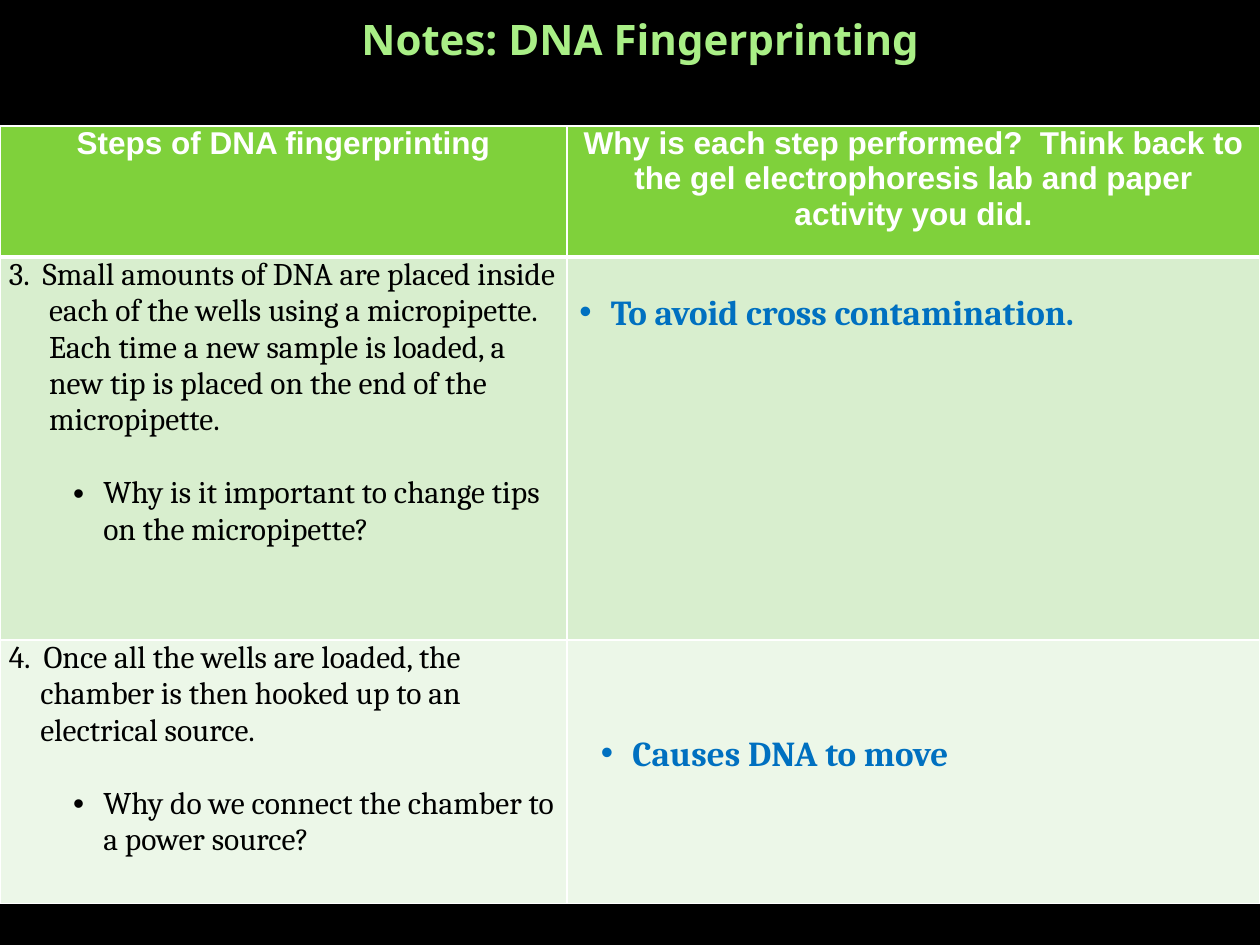
from dataclasses import dataclass

from lxml.etree import SubElement
from pptx import Presentation
from pptx.dml.color import RGBColor
from pptx.enum.text import MSO_ANCHOR, PP_ALIGN
from pptx.oxml.ns import qn
from pptx.util import Inches, Pt


@dataclass(frozen=True)
class Theme:
    backdrop: str = "000000"
    heading: str = "A9EF86"
    header_fill: str = "7FD13B"
    row_fills: tuple = ("D8EECE", "ECF7E8")
    rule: str = "FFFFFF"
    body: str = "000000"
    answer: str = "0070C0"
    title_size: int = 24
    answer_size: int = 20
    table_size: int = 18


@dataclass(frozen=True)
class Style:
    font: str
    size: int
    color: str
    bold: bool = False


@dataclass(frozen=True)
class Step:
    description: str
    hanging: float
    question: str


@dataclass(frozen=True)
class Answer:
    text: str
    left: float
    top: float
    width: float
    height: float


THEME = Theme()
TITLE = Style("Noto Sans", THEME.title_size, THEME.heading, True)
HEADER = Style("Arial", THEME.table_size, THEME.rule, True)
BODY = Style("Cambria", THEME.table_size, THEME.body)
ANSWER = Style("Cambria", THEME.answer_size, THEME.answer, True)

SLIDE_WIDTH, SLIDE_HEIGHT = 10, 7.5
COLUMN_SHARES = (0.45, 0.55)
ROW_HEIGHTS = (1.04, 3.04, 2.09)
TABLE_TOP = 1
BLANK_LINE = 21

HEADERS = (
    "Steps of DNA fingerprinting",
    "Why is each step performed?  Think back to the gel electrophoresis lab "
    "and paper activity you did.",
)
STEPS = (
    Step("3.  Small amounts of DNA are placed inside each of the wells using a "
         "micropipette.  Each time a new sample is loaded, a new tip is placed "
         "on the end of the micropipette.",
         0.32, "Why is it important to change tips on the micropipette?"),
    Step("4.  Once all the wells are loaded, the chamber is then hooked up to an "
         "electrical source.",
         0.25, "Why do we connect the chamber to a power source?"),
)
ANSWERS = (
    Answer("To avoid cross contamination.", 4.5, 2.25, 5.5, 0.44),
    Answer("Causes DNA to move", 4.67, 5.42, 5.17, 0.77),
)


def write(paragraph, text: str, style: Style, align=PP_ALIGN.LEFT) -> None:
    paragraph.alignment = align
    run = paragraph.add_run()
    run.text = text
    run.font.name = style.font
    run.font.size = Pt(style.size)
    run.font.bold = style.bold
    run.font.color.rgb = RGBColor.from_string(style.color)


def indent(paragraph, left: float, hanging: float, bullet: bool = False) -> None:
    properties = paragraph._p.get_or_add_pPr()
    properties.set("marL", str(Inches(left)))
    properties.set("indent", str(-Inches(hanging)))
    if bullet:
        SubElement(properties, qn("a:buFont"), typeface="Arial")
        SubElement(properties, qn("a:buChar"), char="•")


def format_cell(cell, fill: str, top: int, bottom: int) -> None:
    cell.margin_left = cell.margin_right = Inches(0.07)
    cell.margin_top = cell.margin_bottom = 0
    properties = cell._tc.get_or_add_tcPr()
    for side, weight in (("L", 1), ("R", 1), ("T", top), ("B", bottom)):
        border = SubElement(properties, qn(f"a:ln{side}"), w=str(Pt(weight)))
        solid = SubElement(border, qn("a:solidFill"))
        SubElement(solid, qn("a:srgbClr"), val=THEME.rule)
    cell.fill.solid()
    cell.fill.fore_color.rgb = RGBColor.from_string(fill)


def add_title(slide, text: str) -> None:
    title = slide.shapes.add_textbox(Inches(0.58), 0, Inches(9), Inches(0.62))
    title.text_frame.word_wrap = True
    title.text_frame.vertical_anchor = MSO_ANCHOR.MIDDLE
    write(title.text_frame.paragraphs[0], text, TITLE, PP_ALIGN.CENTER)


def write_step(cell, step: Step) -> None:
    description = cell.text_frame.paragraphs[0]
    write(description, step.description, BODY)
    indent(description, step.hanging, step.hanging)
    question = cell.text_frame.add_paragraph()
    question.space_before = Pt(BLANK_LINE)
    write(question, step.question, BODY)
    indent(question, 0.75, 0.24, bullet=True)


def add_steps_table(slide) -> None:
    table = slide.shapes.add_table(
        len(ROW_HEIGHTS), len(COLUMN_SHARES), 0, Inches(TABLE_TOP),
        Inches(SLIDE_WIDTH), Inches(sum(ROW_HEIGHTS))).table
    table.horz_banding = False
    for column, share in zip(table.columns, COLUMN_SHARES):
        column.width = Inches(SLIDE_WIDTH * share)
    fills = (THEME.header_fill, *THEME.row_fills)
    for index, (height, fill) in enumerate(zip(ROW_HEIGHTS, fills)):
        table.rows[index].height = Inches(height)
        for cell in table.rows[index].cells:
            format_cell(cell, fill, 3 if index == 1 else 1, 3 if index == 0 else 1)
    for cell, header in zip(table.rows[0].cells, HEADERS):
        write(cell.text_frame.paragraphs[0], header, HEADER, PP_ALIGN.CENTER)
    for index, step in enumerate(STEPS, start=1):
        write_step(table.cell(index, 0), step)


def add_answer(slide, answer: Answer) -> None:
    box = slide.shapes.add_textbox(Inches(answer.left), Inches(answer.top),
                                   Inches(answer.width), Inches(answer.height))
    box.text_frame.word_wrap = True
    box.text_frame.vertical_anchor = MSO_ANCHOR.BOTTOM
    paragraph = box.text_frame.paragraphs[0]
    write(paragraph, answer.text, ANSWER)
    indent(paragraph, 0.25, 0.25, bullet=True)


def main() -> None:
    deck = Presentation()
    deck.slide_width, deck.slide_height = Inches(SLIDE_WIDTH), Inches(SLIDE_HEIGHT)
    slide = deck.slides.add_slide(deck.slide_layouts[6])
    slide.background.fill.solid()
    slide.background.fill.fore_color.rgb = RGBColor.from_string(THEME.backdrop)
    add_title(slide, "Notes: DNA Fingerprinting")
    add_steps_table(slide)
    for answer in ANSWERS:
        add_answer(slide, answer)
    deck.save("out.pptx")


if __name__ == "__main__":
    main()
